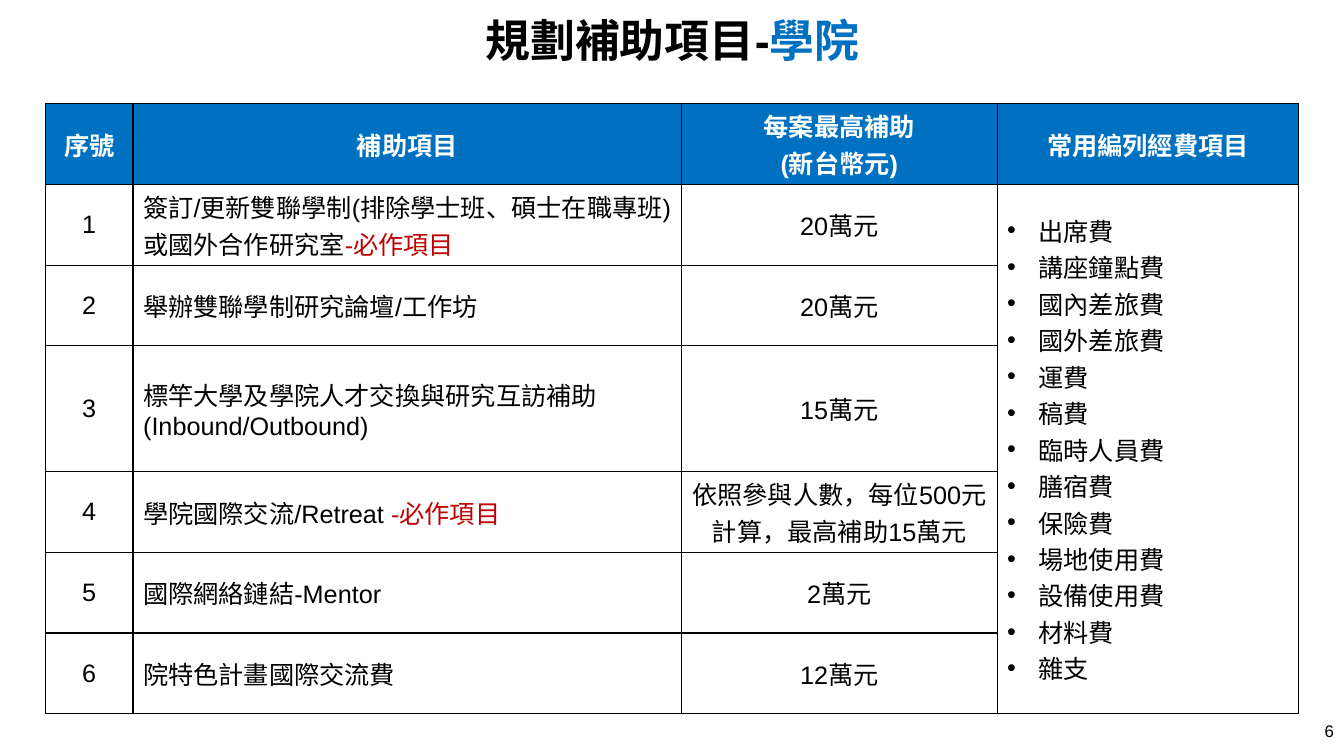
from lxml.etree import SubElement
from pptx import Presentation
from pptx.dml.color import RGBColor
from pptx.enum.text import MSO_ANCHOR, PP_ALIGN
from pptx.oxml.ns import qn
from pptx.util import Inches, Pt

FONT = "Arial"
COLORS = {
    "black": "000000",
    "white": "FFFFFF",
    "blue": "0070C0",
    "red": "C00000",
}
COLUMN_WIDTHS = [0.87, 5.44, 3.13, 2.99]
ROW_HEIGHTS = [0.8, 0.8, 0.8, 1.25, 0.8, 0.8, 0.8]
HEADERS = [["序號"], ["補助項目"], ["每案最高補助", "(新台幣元)"], ["常用編列經費項目"]]
REQUIRED = "-必作項目"
# Item, whether it is required, maximum subsidy
SUBSIDIES = [
    ("簽訂/更新雙聯學制(排除學士班、碩士在職專班)或國外合作研究室", True, "20萬元"),
    ("舉辦雙聯學制研究論壇/工作坊", False, "20萬元"),
    ("標竿大學及學院人才交換與研究互訪補助(Inbound/Outbound)", False, "15萬元"),
    ("學院國際交流/Retreat ", True, "依照參與人數，每位500元計算，最高補助15萬元"),
    ("國際網絡鏈結-Mentor", False, "2萬元"),
    ("院特色計畫國際交流費", False, "12萬元"),
]
EXPENSES = [
    "出席費", "講座鐘點費", "國內差旅費", "國外差旅費", "運費", "稿費", "臨時人員費",
    "膳宿費", "保險費", "場地使用費", "設備使用費", "材料費", "雜支",
]


def rgb(name):
    return RGBColor.from_string(COLORS[name])


def add_run(paragraph, text, size=18, color="black", bold=False):
    run = paragraph.add_run()
    run.text = text
    run.font.name = FONT
    run.font.size = Pt(size)
    run.font.bold = bold
    run.font.color.rgb = rgb(color)


def add_bullet(paragraph):
    properties = paragraph._p.get_or_add_pPr()
    properties.set("marL", str(Inches(0.31)))
    properties.set("indent", str(-Inches(0.31)))
    SubElement(properties, qn("a:buFont"), typeface=FONT)
    SubElement(properties, qn("a:buChar"), char="•")


def set_borders(cell):
    properties = cell._tc.get_or_add_tcPr()
    for position, side in enumerate(("lnL", "lnR", "lnT", "lnB")):
        line = properties.makeelement(qn(f"a:{side}"), {"w": str(Pt(1))})
        fill = SubElement(line, qn("a:solidFill"))
        SubElement(fill, qn("a:srgbClr"), val=COLORS["black"])
        properties.insert(position, line)


def fill_cell(cell, lines, align=PP_ALIGN.CENTER, bullets=False, **run_format):
    """Write lines, each a list of (text, color) runs, into a cell."""
    for index, runs in enumerate(lines):
        frame = cell.text_frame
        paragraph = frame.add_paragraph() if index else frame.paragraphs[0]
        paragraph.alignment = align
        if bullets:
            add_bullet(paragraph)
        for text, color in runs:
            add_run(paragraph, text, color=color, **run_format)


def add_title(slide):
    title = slide.shapes.title
    title.left, title.top = Inches(3.62), Inches(0.17)
    title.width, title.height = Inches(6.1), Inches(0.51)
    title.text_frame.vertical_anchor = MSO_ANCHOR.MIDDLE
    paragraph = title.text_frame.paragraphs[0]
    paragraph.alignment = PP_ALIGN.CENTER
    paragraph.line_spacing = 0.9
    add_run(paragraph, "規劃補助項目-", 32, bold=True)
    add_run(paragraph, "學院", 32, "blue", bold=True)


def add_subsidy_table(slide):
    frame = slide.shapes.add_table(
        len(ROW_HEIGHTS), len(COLUMN_WIDTHS), Inches(0.45), Inches(1.03),
        Inches(sum(COLUMN_WIDTHS)), Inches(sum(ROW_HEIGHTS)))
    table = frame.table
    for column, width in zip(table.columns, COLUMN_WIDTHS):
        column.width = Inches(width)
    for row_index, (row, height) in enumerate(zip(table.rows, ROW_HEIGHTS)):
        row.height = Inches(height)
        for cell in row.cells:
            cell.vertical_anchor = MSO_ANCHOR.MIDDLE
            cell.margin_top = cell.margin_bottom = Inches(0.03)
            cell.fill.solid()
            cell.fill.fore_color.rgb = rgb("white" if row_index else "blue")
            set_borders(cell)

    for column, lines in enumerate(HEADERS):
        fill_cell(table.cell(0, column), [[(line, "white")] for line in lines], bold=True)
    for number, (item, required, amount) in enumerate(SUBSIDIES, start=1):
        item_runs = [(item, "black")]
        if required:
            item_runs.append((REQUIRED, "red"))
        fill_cell(table.cell(number, 0), [[(str(number), "black")]])
        fill_cell(table.cell(number, 1), [item_runs], PP_ALIGN.LEFT)
        fill_cell(table.cell(number, 2), [[(amount, "black")]])

    expenses = table.cell(1, 3)
    expenses.merge(table.cell(len(SUBSIDIES), 3))
    fill_cell(expenses, [[(name, "black")] for name in EXPENSES], PP_ALIGN.LEFT, bullets=True)


def add_page_number(slide):
    box = slide.shapes.add_textbox(Inches(10.33), Inches(7.1), Inches(3), Inches(0.4))
    box.text_frame.word_wrap = True
    paragraph = box.text_frame.paragraphs[0]
    paragraph.alignment = PP_ALIGN.RIGHT
    add_run(paragraph, "6", 12)


def main():
    presentation = Presentation()
    presentation.slide_width = Inches(13.33)
    presentation.slide_height = Inches(7.5)
    slide = presentation.slides.add_slide(presentation.slide_layouts[5])
    add_page_number(slide)
    add_subsidy_table(slide)
    add_title(slide)
    presentation.save("out.pptx")


if __name__ == "__main__":
    main()
